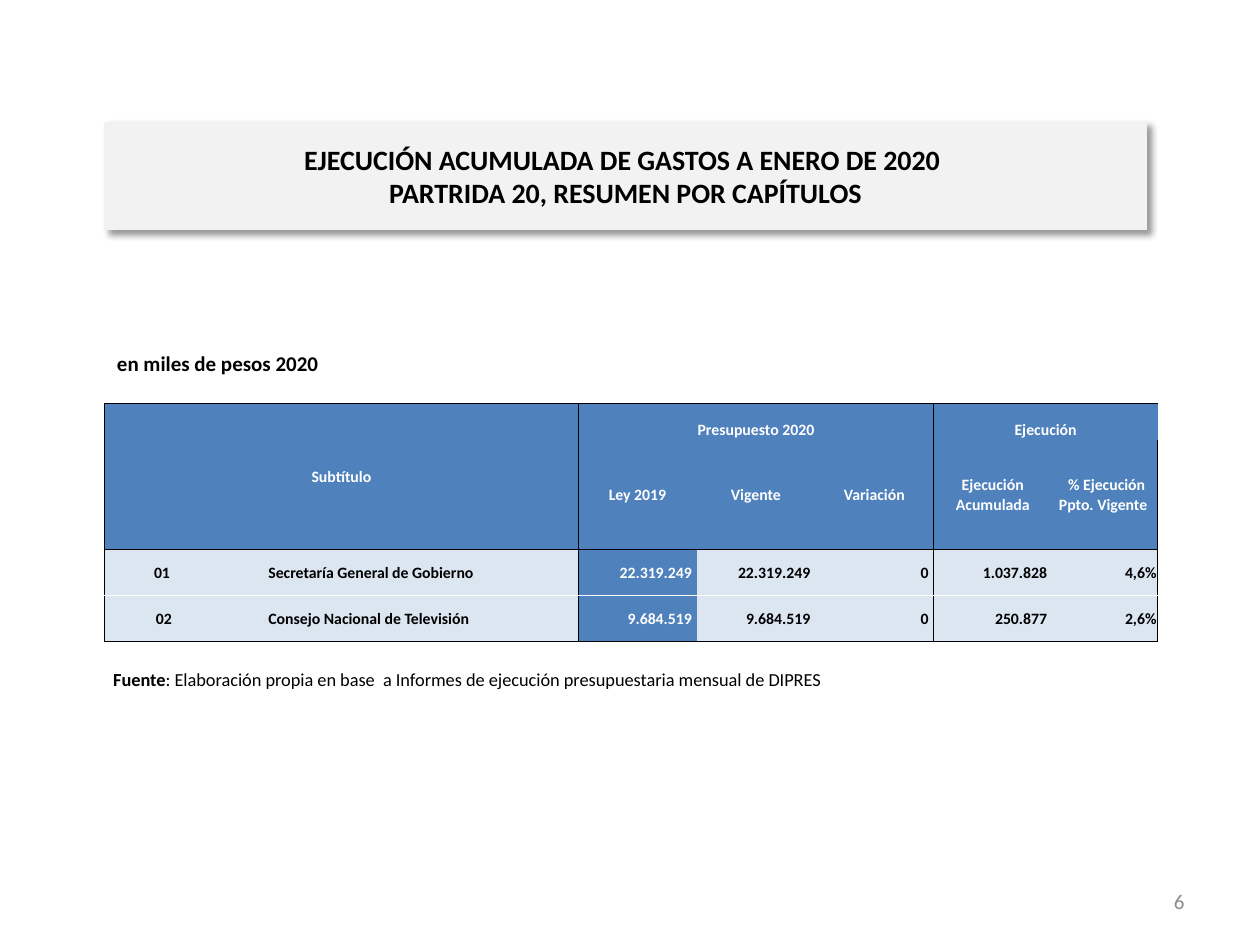
import pptx
import pptx.dml.color
import pptx.enum.shapes
import pptx.enum.text
import pptx.oxml
import pptx.oxml.ns
import pptx.util

Inches = pptx.util.Inches
ALIGN = pptx.enum.text.PP_ALIGN
ANCHOR = pptx.enum.text.MSO_ANCHOR
NS = pptx.oxml.ns.nsdecls("a")

COLORS = {"black": "000000", "white": "FFFFFF", "gray": "8C8C8C",
          "panel": "F2F2F2", "header": "4F81BD", "body": "DCE6F1"}

COLUMNS = [0.94, 0.35, 2.47, 0.94, 0.94, 0.94, 0.94, 0.84]
ROWS = [0.29, 0.87, 0.37, 0.36]
CELLS = [
    ["Subtítulo", "", "", "Presupuesto 2020", "", "", "Ejecución", ""],
    ["", "", "", "Ley 2019", "Vigente", "Variación",
     "Ejecución Acumulada", " % Ejecución Ppto. Vigente "],
    ["01 ", "", "Secretaría General de Gobierno", "22.319.249 ", "22.319.249 ",
     "0 ", "1.037.828 ", "4,6%"],
    ["02", "", "Consejo Nacional de Televisión", "9.684.519 ", "9.684.519 ",
     "0 ", "250.877 ", "2,6%"],
]
MERGES = [((0, 0), (1, 2)), ((0, 3), (0, 5)), ((0, 6), (0, 7))]
BODY_ALIGN = [ALIGN.CENTER, ALIGN.CENTER, ALIGN.JUSTIFY] + [ALIGN.RIGHT] * 5
HEADER_ROWS = 2
LAW_COLUMN = 3
# Border colour by grid line; lines not named here are left undrawn.
VERTICAL_LINES = {0: "black", 3: "black", 6: "black", 8: "black"}
HORIZONTAL_LINES = {0: "black", 2: "black", 3: "white", 4: "black"}


def rgb(name):
    return pptx.dml.color.RGBColor.from_string(COLORS[name])


def set_all(obj, values):
    for name, value in values.items():
        setattr(obj, name, value)


class SlideBuilder:
    def __init__(self, prs, font="Calibri"):
        self.s = prs.slides.add_slide(prs.slide_layouts[6])
        self.font = font

    def add_runs(self, p, runs, size, color="black", align=ALIGN.LEFT):
        """Fill a paragraph with (text, bold) runs; a newline is a line break."""
        p.alignment = align
        for text, bold in runs:
            for i, line in enumerate(text.split("\n")):
                if i:
                    p.add_line_break()
                r = p.add_run()
                r.text = line
                set_all(r.font, {"name": self.font, "size": pptx.util.Pt(size),
                                 "bold": bold})
                r.font.color.rgb = rgb(color)

    def text(self, box, runs, size, color="black", align=ALIGN.LEFT, anchor=ANCHOR.TOP):
        tf = self.s.shapes.add_textbox(*map(Inches, box)).text_frame
        set_all(tf, {"word_wrap": True, "vertical_anchor": anchor})
        self.add_runs(tf.paragraphs[0], runs, size, color, align)

    def banner(self, box, text, size):
        sp = self.s.shapes.add_shape(pptx.enum.shapes.MSO_SHAPE.RECTANGLE,
                                     *map(Inches, box))
        sp.fill.solid()
        sp.fill.fore_color.rgb = rgb("panel")
        sp.line.color.rgb = rgb("panel")
        sp.line.width = pptx.util.Pt(0.75)
        sp.shadow.inherit = False
        effects = sp._element.spPr.find(pptx.oxml.ns.qn("a:effectLst"))
        effects.append(pptx.oxml.parse_xml(
            f'<a:outerShdw {NS} blurRad="{pptx.util.Pt(4)}" dist="{pptx.util.Pt(3)}" '
            f'dir="2700000" algn="tl" rotWithShape="0"><a:srgbClr val="{COLORS["black"]}">'
            '<a:alpha val="40000"/></a:srgbClr></a:outerShdw>'))
        tf = sp.text_frame
        set_all(tf, {"word_wrap": True, "vertical_anchor": ANCHOR.MIDDLE})
        self.add_runs(tf.paragraphs[0], [(text, True)], size, align=ALIGN.CENTER)

    def borders(self, cell, row, col):
        sides = {"L": VERTICAL_LINES.get(col), "R": VERTICAL_LINES.get(col + 1),
                 "T": HORIZONTAL_LINES.get(row), "B": HORIZONTAL_LINES.get(row + 1)}
        tc_pr = cell._tc.get_or_add_tcPr()
        for side, color in sides.items():
            paint = (f'<a:solidFill><a:srgbClr val="{COLORS[color]}"/></a:solidFill>'
                     if color else "<a:noFill/>")
            tc_pr.append(pptx.oxml.parse_xml(
                f'<a:ln{side} {NS} w="{pptx.util.Pt(0.5)}">{paint}</a:ln{side}>'))

    def budget_table(self, box, size):
        table = self.s.shapes.add_table(len(ROWS), len(COLUMNS),
                                        *map(Inches, box)).table
        set_all(table, {"first_row": False, "horz_banding": False})
        for column, width in zip(table.columns, COLUMNS):
            column.width = Inches(width)
        for row, height in zip(table.rows, ROWS):
            row.height = Inches(height)
        for start, end in MERGES:
            table.cell(*start).merge(table.cell(*end))
        for row, texts in enumerate(CELLS):
            for col, text in enumerate(texts):
                cell = table.cell(row, col)
                header = row < HEADER_ROWS
                dark = header or col == LAW_COLUMN
                group_title = row == 0 and col >= LAW_COLUMN
                set_all(cell, {
                    "margin_left": Inches(0.01), "margin_right": Inches(0.01),
                    "margin_top": Inches(0.01), "margin_bottom": 0,
                    "vertical_anchor": ANCHOR.BOTTOM if group_title else ANCHOR.MIDDLE})
                self.borders(cell, row, col)
                cell.fill.solid()
                cell.fill.fore_color.rgb = rgb("header" if dark else "body")
                if text:
                    self.add_runs(cell.text_frame.paragraphs[0], [(text, True)], size,
                                  "white" if dark else "black",
                                  ALIGN.CENTER if header else BODY_ALIGN[col])


def main():
    prs = pptx.Presentation()
    set_all(prs, {"slide_width": Inches(10), "slide_height": Inches(7.5)})
    slide = SlideBuilder(prs)
    slide.banner((0.83, 0.97, 8.27, 0.85),
                 "EJECUCIÓN ACUMULADA DE GASTOS A ENERO DE 2020 \n"
                 "PARTRIDA 20, RESUMEN POR CAPÍTULOS", 16)
    slide.text((7.17, 6.95, 2.33, 0.4), [("6", False)], 12, "gray",
               ALIGN.RIGHT, ANCHOR.MIDDLE)
    slide.text((0.8, 5.25, 8.25, 0.4),
               [("Fuente", True),
                (": Elaboración propia en base  a Informes de ejecución "
                 "presupuestaria mensual de DIPRES", False)], 10.5)
    slide.text((0.83, 2.73, 8.11, 0.31), [("en miles de pesos 2020", True)], 12)
    slide.budget_table((0.83, 3.2, sum(COLUMNS), sum(ROWS)), 9)
    prs.save("out.pptx")


if __name__ == "__main__":
    main()
